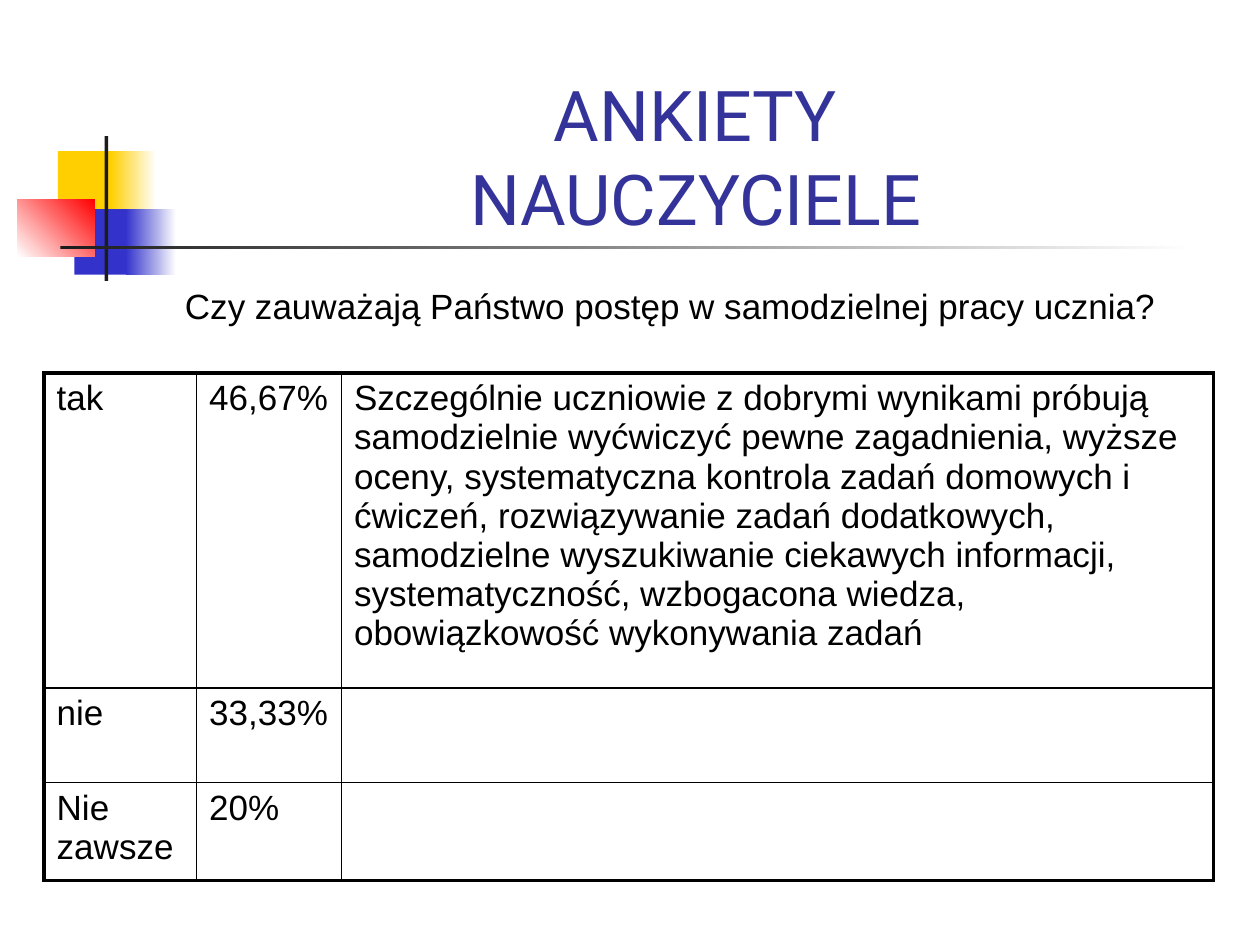
from lxml.etree import SubElement
from pptx import Presentation
from pptx.dml.color import RGBColor
from pptx.enum.shapes import MSO_SHAPE as Shape
from pptx.enum.text import MSO_ANCHOR as Anchor, PP_ALIGN as Align
from pptx.oxml.ns import qn
from pptx.util import Inches, Pt

COLORS = {
    "yellow": "FFCF01", "blue": "3333CC", "red": "FF0000", "dark": "1C1C1C",
    "white": "FFFFFF", "black": "000000", "title": "333399",
}
ORNAMENTS = [
    ((0.46, 1.2, 0.48, 0.52), ["yellow"], 0),
    ((0.88, 1.2, 0.36, 0.52), ["yellow", "white"], 0),
    ((0.59, 1.66, 0.46, 0.52), ["blue"], 0),
    ((1, 1.66, 0.4, 0.52), ["blue", "white"], 0),
    ((0.14, 1.58, 0.61, 0.46), ["white", "red"], 45),
    ((0.83, 1.08, 0.03, 1.15), ["dark"], 0),
    ((0.48, 1.95, 9, 0.03), ["dark", "white"], 0),
]
TITLE = ["ANKIETY", "NAUCZYCIELE"]
QUESTION = "Czy zauważają Państwo postęp w samodzielnej pracy ucznia?"
ANSWERS = [
    ("tak", "46,67%",
     "Szczególnie uczniowie z dobrymi wynikami próbują samodzielnie wyćwiczyć "
     "pewne zagadnienia, wyższe oceny, systematyczna kontrola zadań domowych i "
     "ćwiczeń, rozwiązywanie zadań dodatkowych, samodzielne wyszukiwanie "
     "ciekawych informacji, systematyczność, wzbogacona wiedza, obowiązkowość "
     "wykonywania zadań"),
    ("nie", "33,33%", ""),
    ("Nie zawsze", "20%", ""),
]
COLUMN_WIDTHS = [1.21, 1.15, 6.92]
ROW_HEIGHTS = [2.5, 0.75, 0.78]
OUTER_LINE, INNER_LINE = 2.25, 1


def rgb(name):
    return RGBColor.from_string(COLORS[name])


def write(frame, lines, size=20, font="Arial", color="black", align=Align.LEFT,
          anchor=Anchor.TOP):
    frame.word_wrap = True
    frame.vertical_anchor = anchor
    for index, line in enumerate(lines):
        para = frame.add_paragraph() if index else frame.paragraphs[0]
        para.alignment = align
        span = para.add_run()
        span.text = line
        span.font.size = Pt(size)
        span.font.name = font
        span.font.color.rgb = rgb(color)


def add_text(slide, place, lines, **style):
    box = slide.shapes.add_textbox(*map(Inches, place))
    write(box.text_frame, lines, align=Align.CENTER, **style)


def add_ornament(slide, place, colors, angle):
    block = slide.shapes.add_shape(Shape.RECTANGLE, *map(Inches, place))
    block.shadow.inherit = False
    block.line.fill.background()
    if len(colors) == 1:
        block.fill.solid()
        block.fill.fore_color.rgb = rgb(colors[0])
        return
    block.fill.gradient()
    block.fill.gradient_angle = angle
    for position, (stop, color) in enumerate(zip(block.fill.gradient_stops, colors)):
        stop.position = position
        stop.color.rgb = rgb(color)


def add_borders(cell, outer_sides):
    properties = cell._tc.get_or_add_tcPr()
    for side in "LRTB":
        width = OUTER_LINE if side in outer_sides else INNER_LINE
        line = SubElement(properties, qn(f"a:ln{side}"), w=str(Pt(width)))
        fill = SubElement(line, qn("a:solidFill"))
        SubElement(fill, qn("a:srgbClr"), val=COLORS["black"])


def add_answers(slide, left, top):
    last_row, last_column = len(ROW_HEIGHTS) - 1, len(COLUMN_WIDTHS) - 1
    size = sum(COLUMN_WIDTHS), sum(ROW_HEIGHTS)
    table = slide.shapes.add_table(
        last_row + 1, last_column + 1, *map(Inches, (left, top, *size))).table
    table.first_row = table.horz_banding = False
    for column, width in zip(table.columns, COLUMN_WIDTHS):
        column.width = Inches(width)
    for r, (row, height) in enumerate(zip(table.rows, ROW_HEIGHTS)):
        row.height = Inches(height)
        for c, (cell, text) in enumerate(zip(row.cells, ANSWERS[r])):
            edges = {"L": c == 0, "R": c == last_column, "T": r == 0, "B": r == last_row}
            add_borders(cell, [side for side, outer in edges.items() if outer])
            cell.fill.background()
            if text:
                write(cell.text_frame, [text])


def main():
    deck = Presentation()
    deck.slide_width, deck.slide_height = Inches(10), Inches(7.5)
    slide = deck.slides.add_slide(deck.slide_layouts[6])
    for ornament in ORNAMENTS:
        add_ornament(slide, *ornament)
    add_text(slide, (1.06, 2.02, 8.52, 0.62), [QUESTION], anchor=Anchor.BOTTOM)
    add_answers(slide, 0.35, 2.96)
    add_text(slide, (1.26, 0.52, 8.52, 1.25), TITLE, size=40, font="Roboto", color="title")
    deck.save("out.pptx")


if __name__ == "__main__":
    main()
